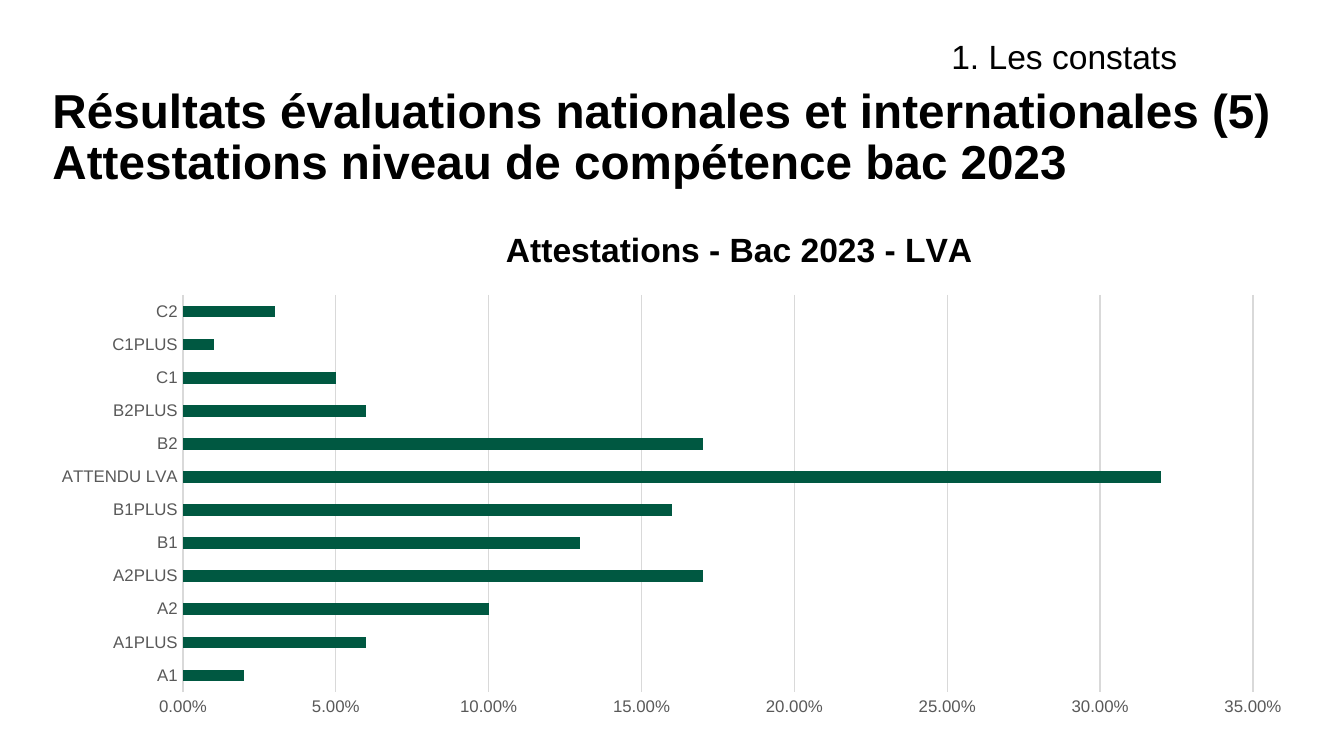
import pptx
import pptx.util
import pptx.chart.data
import pptx.dml.color
import pptx.enum.chart
import pptx.enum.text
import pptx.oxml
import pptx.oxml.ns

Inches, Pt = pptx.util.Inches, pptx.util.Pt
FONT = "Arial"
BLACK, GRAY, GRID, GREEN = "000000", "595959", "D9D9D9", "005841"

LEVELS = {
    "A1": 0.02, "A1PLUS": 0.06, "A2": 0.1, "A2PLUS": 0.17,
    "B1": 0.13, "B1PLUS": 0.16, "ATTENDU LVA": 0.32, "B2": 0.17,
    "B2PLUS": 0.06, "C1": 0.05, "C1PLUS": 0.01, "C2": 0.03,
}


def color(hex_code):
    return pptx.dml.color.RGBColor.from_string(hex_code)


def style_font(font, size, hex_code, bold=False):
    font.name, font.size, font.bold = FONT, Pt(size), bold
    font.color.rgb = color(hex_code)


def style_line(line, hex_code):
    line.color.rgb = color(hex_code)
    line.width = Pt(0.75)


def set_layout(parent, index, **fractions):
    """Place a chart part by fractions of the chart area."""
    for old in parent.findall(pptx.oxml.ns.qn("c:layout")):
        parent.remove(old)
    modes = {"xMode": "edge", "yMode": "edge"}
    if "w" in fractions:
        modes = {"layoutTarget": "inner", **modes}
    parts = "".join(f'<c:{k} val="{v}"/>' for k, v in {**modes, **fractions}.items())
    parent.insert(index, pptx.oxml.parse_xml(
        f'<c:layout {pptx.oxml.ns.nsdecls("c")}>'
        f"<c:manualLayout>{parts}</c:manualLayout></c:layout>"))


def add_title(s, x, y, w, h):
    sp = s.shapes.title
    sp.left, sp.top, sp.width, sp.height = map(Inches, (x, y, w, h))
    tf = sp.text_frame
    tf.text = ("Résultats évaluations nationales et internationales (5)\v"
               "Attestations niveau de compétence bac 2023")
    tf.margin_left = tf.margin_right = tf.margin_top = tf.margin_bottom = 0
    tf.word_wrap = True
    tf.auto_size = pptx.enum.text.MSO_AUTO_SIZE.NONE
    tf.vertical_anchor = pptx.enum.text.MSO_ANCHOR.TOP
    p = tf.paragraphs[0]
    p.alignment = pptx.enum.text.PP_ALIGN.LEFT
    p.line_spacing = 0.9
    for r in p.runs:
        style_font(r.font, 25.5, BLACK, bold=True)


def add_section_label(s, x, y, w, h):
    tf = s.shapes.add_textbox(*map(Inches, (x, y, w, h))).text_frame
    tf.word_wrap = True
    tf.auto_size = pptx.enum.text.MSO_AUTO_SIZE.SHAPE_TO_FIT_TEXT
    tf.text = "1. Les constats"
    style_font(tf.paragraphs[0].runs[0].font, 18, BLACK)


def add_results_chart(s, x, y, w, h):
    data = pptx.chart.data.CategoryChartData(number_format="0.00%")
    data.categories = list(LEVELS)
    data.add_series("Series 1", list(LEVELS.values()))
    chart = s.shapes.add_chart(pptx.enum.chart.XL_CHART_TYPE.BAR_CLUSTERED,
                               *map(Inches, (x, y, w, h)), data).chart
    chart.has_legend = False
    style_font(chart.font, 10, BLACK)

    # Chart title
    chart.has_title = True
    tf = chart.chart_title.text_frame
    tf.text = "Attestations - Bac 2023 - LVA"
    style_font(tf.paragraphs[0].runs[0].font, 18, BLACK, bold=True)
    chart.chart_title.include_in_layout = False

    # Bars
    plot = chart.plots[0]
    plot.gap_width = 182
    plot.vary_by_categories = False
    fill = plot.series[0].format.fill
    fill.solid()
    fill.fore_color.rgb = color(GREEN)

    # Axes
    cat, val = chart.category_axis, chart.value_axis
    for axis in (cat, val):
        axis.major_tick_mark = pptx.enum.chart.XL_TICK_MARK.NONE
        axis.minor_tick_mark = pptx.enum.chart.XL_TICK_MARK.NONE
        style_font(axis.tick_labels.font, 9, GRAY)
    cat.has_major_gridlines = False
    style_line(cat.format.line, GRID)
    val.minimum_scale, val.maximum_scale, val.major_unit = 0, 0.35, 0.05
    val.has_major_gridlines = True
    style_line(val.major_gridlines.format.line, GRID)
    val.format.line.fill.background()
    val.tick_labels.number_format = "0.00%"
    val.tick_labels.number_format_is_linked = False

    # Positions of the title and the plot area
    area = chart.element.find(pptx.oxml.ns.qn("c:chart"))
    set_layout(area.find(pptx.oxml.ns.qn("c:title")), 1, x=0.365, y=0.01)
    set_layout(area.find(pptx.oxml.ns.qn("c:plotArea")), 0,
               x=0.1155, y=0.154, w=0.8425, h=0.778)


def main():
    prs = pptx.Presentation()
    # Widescreen 16:9
    prs.slide_width, prs.slide_height = Inches(10), Inches(10 * 9 / 16)
    s = prs.slides.add_slide(prs.slide_layouts[5])
    add_title(s, 0.39, 0.65, 9.21, 0.79)
    add_results_chart(s, 0.27, 1.61, 9.45, 3.8)
    add_section_label(s, 6.98, 0.22, 2.44, 0.4)
    prs.save("out.pptx")


if __name__ == "__main__":
    main()
